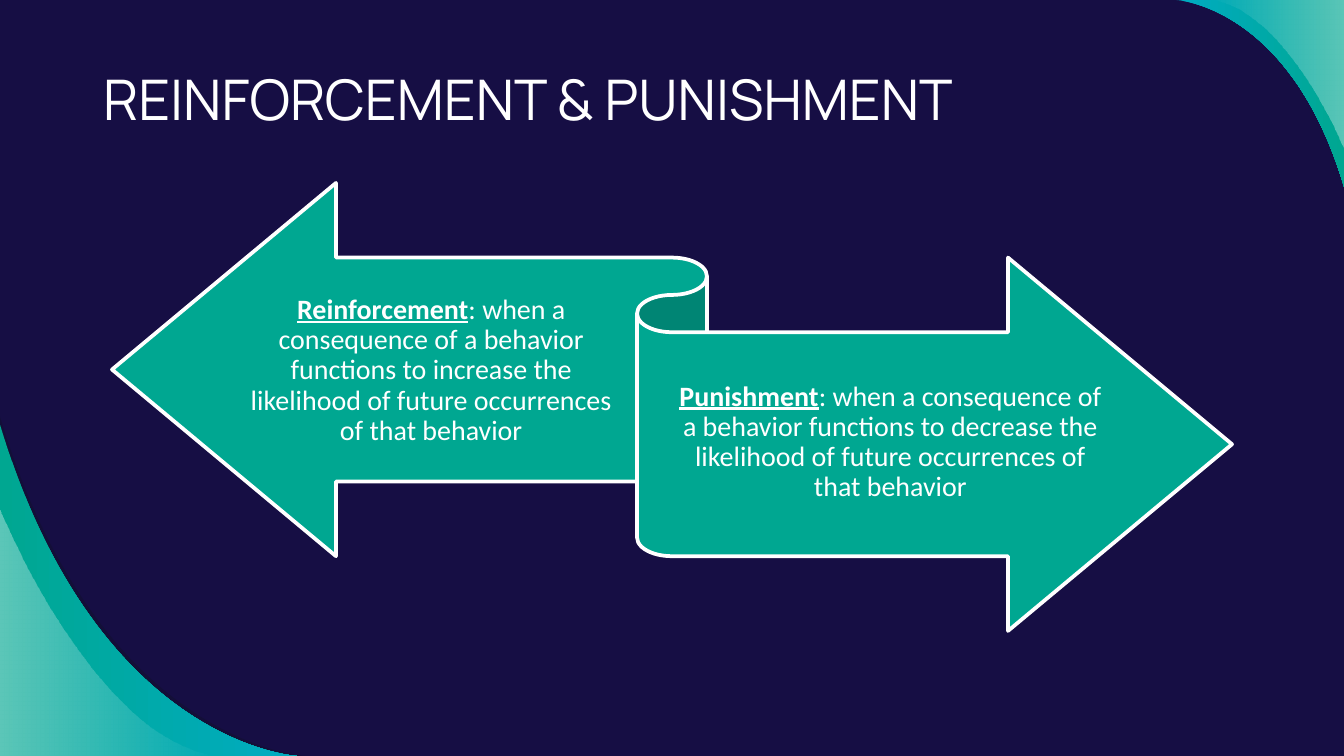
import pptx
import pptx.util
import pptx.dml.color
import pptx.enum.shapes
import pptx.enum.text
import pptx.oxml
import pptx.oxml.ns

Pt = pptx.util.Pt
RGB = pptx.dml.color.RGBColor.from_string
ALIGN = pptx.enum.text.PP_ALIGN
ANCHOR = pptx.enum.text.MSO_ANCHOR
qn = pptx.oxml.ns.qn

COLORS = {"background": "160E44", "shade": "12102F", "cyan": "00ACC2",
          "green": "00A791", "white": "FFFFFF"}
SLIDE_SIZE = (720, 405)

TITLE_FONT = {"name": "Manrope", "size": Pt(30), "bold": False}
BODY_FONT = {"name": "Calibri", "size": Pt(15)}
TERM_FONT = {**BODY_FONT, "bold": True, "underline": True}
MEANING_FONT = {**BODY_FONT, "bold": False, "underline": False}

# Waves: four Bezier points in the corner's box, then (color, opacity %) stops
LEFT_WAVES = [
    ([(0, 0), (52.6, 175.7), (163.4, 181.8), (163.4, 181.8)], [("shade", 54)]),
    ([(0, 4.3), (51.8, 176.4), (159.1, 181.8), (159.1, 181.8)],
     [("green", 100), ("cyan", 100)]),
    ([(0, 50.4), (0, 50.4), (49.7, 173.5), (116.6, 181.8)],
     [("white", 36), ("white", 0)]),
]
RIGHT_WAVES = [
    ([(0, 0), (0, 0), (61.2, 2.9), (90, 100)],
     [("cyan", 100), ("green", 100)]),
    ([(18.7, 0), (59.8, 5), (90, 80.6), (90, 80.6)],
     [("white", 0), ("white", 36)]),
]

# Definitions: term, meaning, text box relative to the ribbon
DEFINITIONS = [
    ("Reinforcement", ": when a consequence of a behavior functions to increase "
     "the likelihood of future occurrences of that behavior", (72, 41.8, 198, 117.6)),
    ("Punishment", ": when a consequence of a behavior functions to decrease "
     "the likelihood of future occurrences of that behavior", (300, 80.2, 234, 117.6)),
]


def apply_format(target, values):
    for attribute, value in values.items():
        setattr(target, attribute, value)


def set_opacity(fill, opacities):
    for color, opacity in zip(fill.iter(qn("a:srgbClr")), opacities):
        if opacity < 100:
            color.append(pptx.oxml.parse_xml(
                f'<a:alpha {pptx.oxml.ns.nsdecls("a")} val="{opacity * 1000}"/>'))


def bend_first_side(wave, handles):
    """Turn the first straight side of the outline into a Bezier curve."""
    side = next(wave._element.iter(qn("a:lnTo")))
    side.tag = qn("a:cubicBezTo")
    for index, (x, y) in enumerate(handles):
        side.insert(index, pptx.oxml.parse_xml(
            f'<a:pt {pptx.oxml.ns.nsdecls("a")} '
            f'x="{x - wave.left}" y="{y - wave.top}"/>'))


def add_corner(slide, box, corner, waves):
    left, top = box[:2]
    group = slide.shapes.add_group_shape()
    for controls, stops in waves:
        start, *handles, end, tip = [(Pt(left + x), Pt(top + y))
                                     for x, y in [*controls, corner]]
        builder = group.shapes.build_freeform(*start, scale=1.0)
        builder.add_line_segments([end, tip], close=True)
        wave = builder.convert_to_shape()
        bend_first_side(wave, handles)
        wave.shadow.inherit = False
        wave.line.fill.background()
        if len(stops) == 1:
            wave.fill.solid()
            wave.fill.fore_color.rgb = RGB(COLORS[stops[0][0]])
        else:
            wave.fill.gradient()
            wave.fill.gradient_angle = 0
            for stop, (color, _) in zip(wave.fill.gradient_stops, stops):
                stop.color.rgb = RGB(COLORS[color])
        set_opacity(wave._element.spPr, [opacity for _, opacity in stops])


def add_title(slide, box, wording):
    title = slide.shapes.title
    apply_format(title, dict(zip(("left", "top", "width", "height"), map(Pt, box))))
    frame = title.text_frame
    frame.text = wording
    margins = dict.fromkeys(
        ("margin_left", "margin_top", "margin_right", "margin_bottom"), Pt(7.2))
    apply_format(frame, {**margins, "vertical_anchor": ANCHOR.MIDDLE, "word_wrap": True,
                         "auto_size": pptx.enum.text.MSO_AUTO_SIZE.NONE})
    paragraph = frame.paragraphs[0]
    paragraph.alignment = ALIGN.LEFT
    font = paragraph.runs[0].font
    apply_format(font, TITLE_FONT)
    font.color.rgb = RGB(COLORS["white"])


def add_ribbon(slide, box):
    left, top = box[:2]
    group = slide.shapes.add_group_shape()
    ribbon = group.shapes.add_shape(
        pptx.enum.shapes.MSO_SHAPE.LEFT_RIGHT_RIBBON, *map(Pt, box))
    ribbon.shadow.inherit = False
    ribbon.fill.solid()
    ribbon.fill.fore_color.rgb = RGB(COLORS["green"])
    ribbon.line.color.rgb = RGB(COLORS["white"])
    ribbon.line.width = Pt(2)

    # One definition on each arrow
    for term, meaning, (x, y, width, height) in DEFINITIONS:
        definition = group.shapes.add_textbox(
            Pt(left + x), Pt(top + y), Pt(width), Pt(height))
        frame = definition.text_frame
        apply_format(frame, {"margin_left": 0, "margin_right": 0,
                             "margin_top": Pt(4.3), "margin_bottom": Pt(4.3),
                             "vertical_anchor": ANCHOR.MIDDLE, "word_wrap": True})
        paragraph = frame.paragraphs[0]
        apply_format(paragraph, {"alignment": ALIGN.CENTER, "line_spacing": 0.9})
        for wording, style in ((term, TERM_FONT), (meaning, MEANING_FONT)):
            run = paragraph.add_run()
            run.text = wording
            apply_format(run.font, style)
            run.font.color.rgb = RGB(COLORS["white"])


def main():
    deck = pptx.Presentation()
    deck.slide_width, deck.slide_height = map(Pt, SLIDE_SIZE)
    slide = deck.slides.add_slide(deck.slide_layouts[5])
    slide.background.fill.solid()
    slide.background.fill.fore_color.rgb = RGB(COLORS["background"])

    # Corner waves
    add_corner(slide, (0, 223.2, 163.4, 181.8), (0, 181.8), LEFT_WAVES)
    add_corner(slide, (630, 0, 90, 100), (90, 0), RIGHT_WAVES)

    # Heading and double arrow
    add_title(slide, (48, 27.5, 554, 50), "REINFORCEMENT & PUNISHMENT")
    add_ribbon(slide, (60, 98, 600, 240))
    deck.save("out.pptx")


if __name__ == "__main__":
    main()
